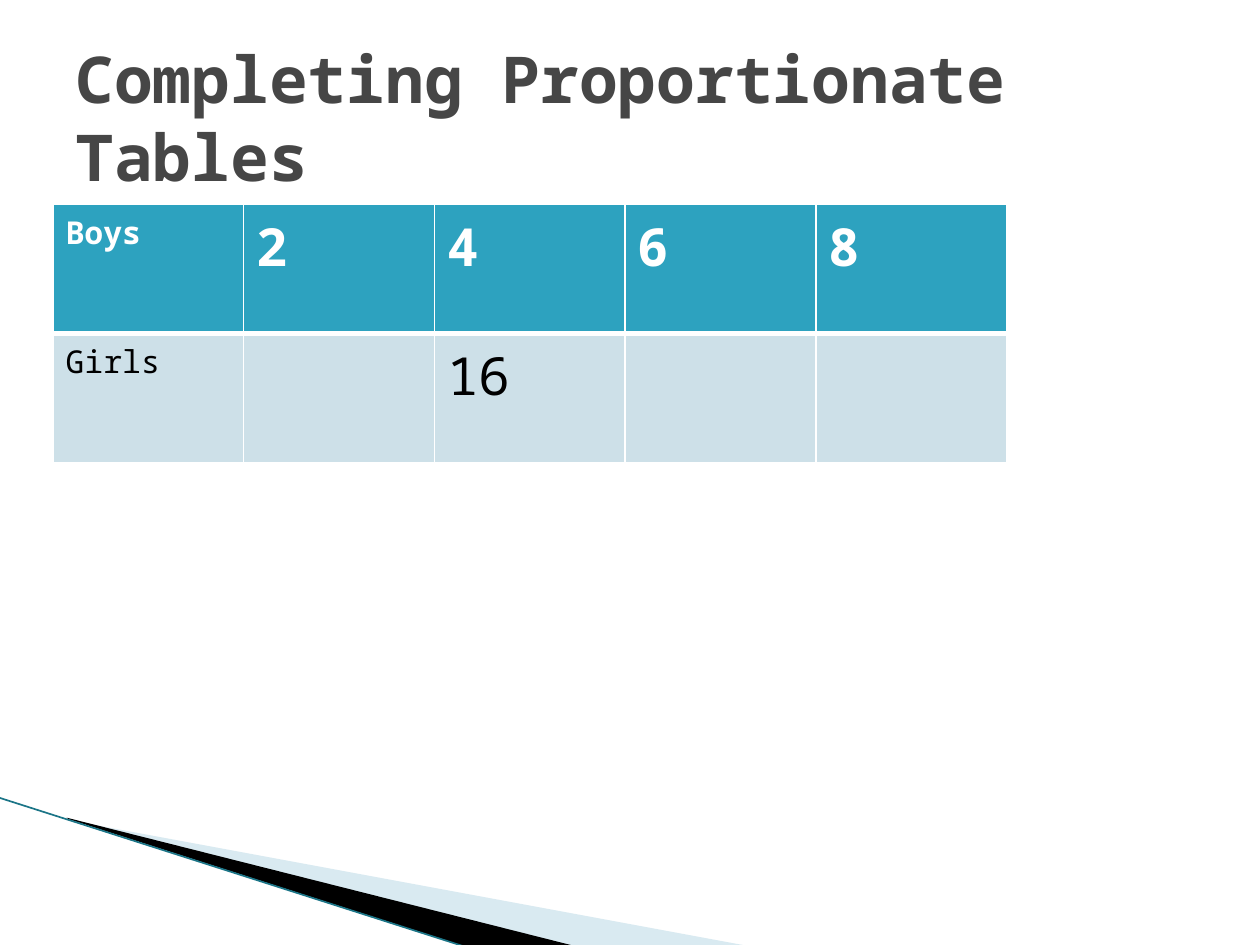
from dataclasses import dataclass

from lxml.etree import SubElement
from pptx import Presentation
from pptx.dml.color import RGBColor
from pptx.enum.shapes import MSO_CONNECTOR
from pptx.enum.text import MSO_ANCHOR
from pptx.oxml.ns import qn
from pptx.slide import Slide
from pptx.table import _Cell
from pptx.text.text import _Paragraph
from pptx.util import Inches, Pt

WIDTH, HEIGHT = 10, 7.5


@dataclass(frozen=True)
class Theme:
    font: str = "Noto Sans Mono"
    title: str = "464646"
    header: str = "2DA2BF"
    body: str = "CDE0E8"
    light: str = "FFFFFF"
    dark: str = "000000"
    wedge: str = "A0CBDC"
    edge: str = "1B7587"
    title_size: float = 36.9
    label_size: float = 18
    number_size: float = 30


@dataclass(frozen=True)
class Wedge:
    frame: tuple[float, float, float, float]
    points: tuple[tuple[float, float], ...]
    color: str
    opacity: int = 100


@dataclass(frozen=True)
class Row:
    texts: tuple[str, ...]
    fill: str
    color: str
    bold: bool
    top_line: float
    bottom_line: float


THEME = Theme()
WEDGES = (
    Wedge(
        (0.78, 5.47, 4.16, 1.58),
        ((0.55, 6.51), (5.95, 7.51), (4.56, 7.51), (0.55, 6.5)),
        THEME.wedge,
        40,
    ),
    Wedge(
        (-0.06, 6.33, 4.16, 0.92),
        ((0.53, 6.49), (4.57, 7.51), (3.72, 7.52), (0.54, 6.5)),
        THEME.dark,
    ),
)
ROWS = (
    Row(("Boys", "2", "4", "6", "8"), THEME.header, THEME.light, True, 1, 3),
    Row(("Girls", "", "16", "", ""), THEME.body, THEME.dark, False, 3, 1),
)


def set_font(para: _Paragraph, size: float, color: str, bold: bool) -> None:
    font = para.font
    font.name, font.size, font.bold = THEME.font, Pt(size), bold
    font.color.rgb = RGBColor.from_string(color)


def draw_wedge(page: Slide, wedge: Wedge) -> None:
    points = [(Inches(x), Inches(y)) for x, y in wedge.points]
    builder = page.shapes.build_freeform(*points[0])
    builder.add_line_segments(points[1:], close=True)
    shape = builder.convert_to_shape()
    # The outline reaches beyond its frame, so its points are set relative to the frame
    left, top, width, height = (Inches(length) for length in wedge.frame)
    for outline in shape._element.iter(qn("a:path")):
        outline.set("w", str(width))
        outline.set("h", str(height))
    for point, (x, y) in zip(shape._element.iter(qn("a:pt")), points):
        point.set("x", str(x - left))
        point.set("y", str(y - top))
    shape.left, shape.top, shape.width, shape.height = left, top, width, height
    shape.shadow.inherit = False
    shape.line.fill.background()
    shape.fill.solid()
    shape.fill.fore_color.rgb = RGBColor.from_string(wedge.color)
    if wedge.opacity < 100:
        color = shape.fill._xPr.find(qn("a:solidFill"))[0]
        SubElement(color, qn("a:alpha"), val=str(wedge.opacity * 1000))


def draw_edge(page: Slide) -> None:
    line = page.shapes.add_connector(
        MSO_CONNECTOR.STRAIGHT, Inches(-0.01), Inches(6.33), Inches(3.71), Inches(7.52)
    )
    line.line.color.rgb = RGBColor.from_string(THEME.edge)
    line.line.width = Pt(0.95)
    SubElement(line._element.spPr, qn("a:effectLst"))


def set_borders(cell: _Cell, row: Row) -> None:
    properties = cell._tc.get_or_add_tcPr()
    sides = {"lnL": 1, "lnR": 1, "lnT": row.top_line, "lnB": row.bottom_line}
    for index, (side, width) in enumerate(sides.items()):
        border = SubElement(properties, qn(f"a:{side}"), w=str(Pt(width)))
        fill = SubElement(border, qn("a:solidFill"))
        SubElement(fill, qn("a:srgbClr"), val=THEME.light)
        properties.insert(index, border)  # borders come before the fill


def draw_table(page: Slide) -> None:
    columns = len(ROWS[0].texts)
    table = page.shapes.add_table(
        len(ROWS), columns, Inches(0.42), Inches(1.62), Inches(7.57), Inches(2.05)
    ).table
    for row_index, row in enumerate(ROWS):
        for column, text in enumerate(row.texts):
            cell = table.cell(row_index, column)
            cell.fill.solid()
            cell.fill.fore_color.rgb = RGBColor.from_string(row.fill)
            set_borders(cell, row)
            para = cell.text_frame.paragraphs[0]
            para.text = text
            size = THEME.number_size if column else THEME.label_size
            set_font(para, size, row.color, row.bold)


def draw_title(page: Slide) -> None:
    box = page.shapes.add_textbox(
        Inches(WIDTH * 0.05), Inches(HEIGHT * 0.04), Inches(WIDTH * 0.9), Inches(1.25)
    )
    frame = box.text_frame
    frame.word_wrap = True
    frame.vertical_anchor = MSO_ANCHOR.MIDDLE
    para = frame.paragraphs[0]
    para.text = "Completing Proportionate Tables"
    set_font(para, THEME.title_size, THEME.title, True)


def main() -> None:
    deck = Presentation()
    deck.slide_width, deck.slide_height = Inches(WIDTH), Inches(HEIGHT)
    page = deck.slides.add_slide(deck.slide_layouts[6])
    # Corner decoration
    for wedge in WEDGES:
        draw_wedge(page, wedge)
    draw_edge(page)
    # Content
    draw_table(page)
    draw_title(page)
    deck.save("out.pptx")


if __name__ == "__main__":
    main()
